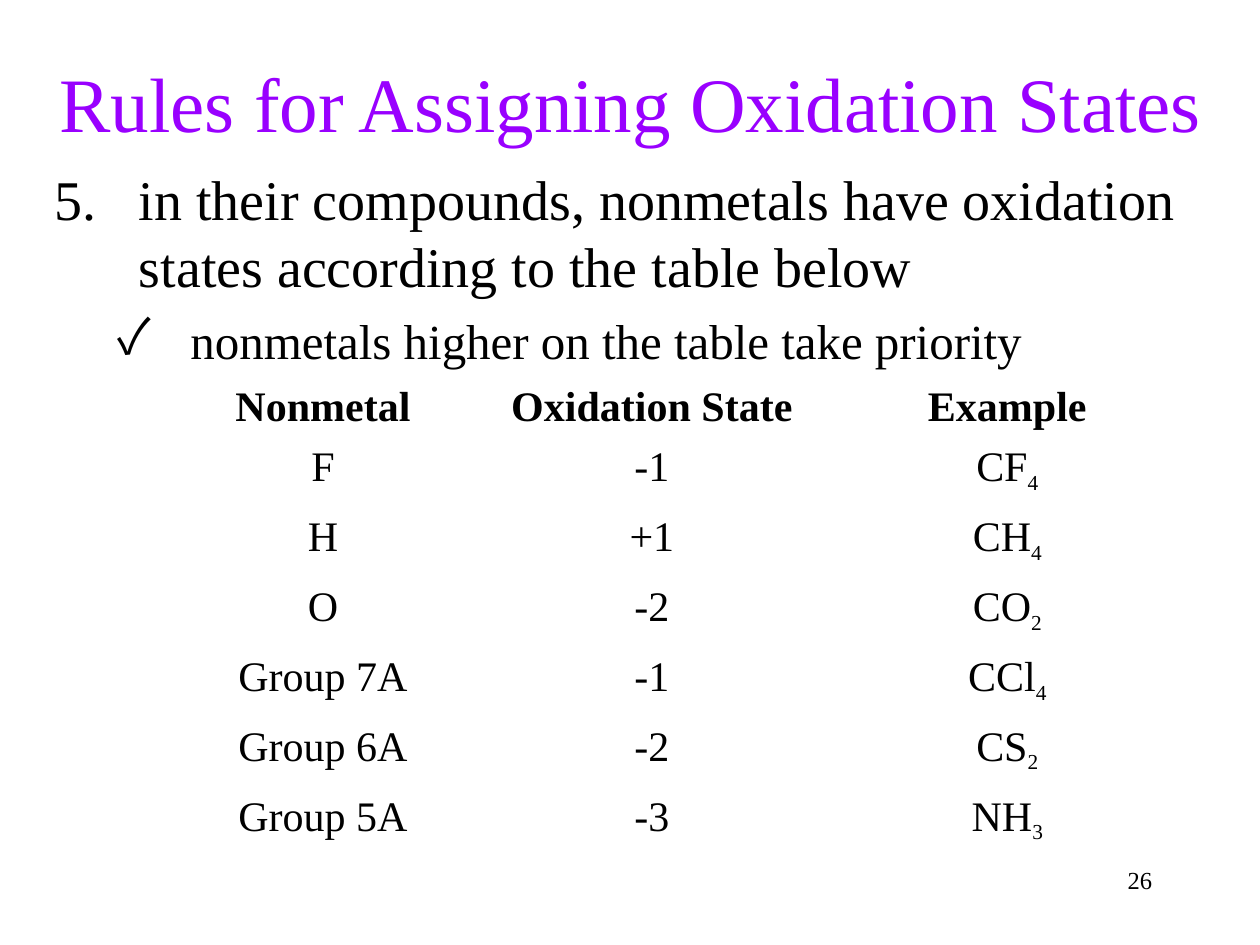
import pptx
import pptx.dml.color
import pptx.enum.text
import pptx.util

SERIF = "Times New Roman"
SYMBOL = "Noto Sans CJK KR"
BLACK = "000000"
HEADINGS = ("Nonmetal", "Oxidation State", "Example")
RULES = (
    ("F", "-1", "CF", "4"),
    ("H", "+1", "CH", "4"),
    ("O", "-2", "CO", "2"),
    ("Group 7A", "-1", "CCl", "4"),
    ("Group 6A", "-2", "CS", "2"),
    ("Group 5A", "-3", "NH", "3"),
)
COLUMN_WIDTHS = (4.9, 8.36, 5.0, 0.99)
HEADING_HEIGHT, RULE_HEIGHT, NUMBER_HEIGHT = 1.12, 1.41, 0.74


def rgb(hex_string):
    """Return the colour for a hex string."""
    return pptx.dml.color.RGBColor.from_string(hex_string)


def format_paragraph(paragraph, size, color=BLACK, font=SERIF, bold=False,
                     before=1, margin=0, indent=0):
    """Set the font, the space before and the indents of a paragraph."""
    paragraph.font.name = font
    paragraph.font.size = pptx.util.Pt(size)
    paragraph.font.bold = bold
    paragraph.font.color.rgb = rgb(color)
    paragraph.space_before = pptx.util.Pt(before)
    properties = paragraph._p.get_or_add_pPr()
    properties.set("marL", str(pptx.util.Cm(margin)))
    properties.set("indent", str(pptx.util.Cm(indent)))


def set_frame(frame):
    """Give a text frame wrapped text that starts at its top left corner."""
    frame.word_wrap = True
    frame.auto_size = pptx.enum.text.MSO_AUTO_SIZE.NONE
    frame.vertical_anchor = pptx.enum.text.MSO_ANCHOR.TOP
    frame.margin_left = frame.margin_right = frame.margin_bottom = 0
    frame.margin_top = pptx.util.Cm(0.03)


def add_title(slide, left, top, width, height):
    """Place and format the title placeholder."""
    title = slide.shapes.title
    title.left, title.top = pptx.util.Cm(left), pptx.util.Cm(top)
    title.width, title.height = pptx.util.Cm(width), pptx.util.Cm(height)
    set_frame(title.text_frame)
    title.text_frame.text = "Rules for Assigning Oxidation States"
    heading = title.text_frame.paragraphs[0]
    heading.alignment = pptx.enum.text.PP_ALIGN.LEFT
    format_paragraph(heading, 44, "9900FF", margin=0.03)


def add_text(slide, left, top, width, height, text, size, **style):
    """Add a text box with one paragraph."""
    box = slide.shapes.add_textbox(
        *(pptx.util.Cm(length) for length in (left, top, width, height)))
    set_frame(box.text_frame)
    box.text_frame.text = text
    format_paragraph(box.text_frame.paragraphs[0], size, **style)


def add_rule(slide, left, top):
    """Add the numbered rule and its checked remark below."""
    add_text(slide, left, top, 22.7, 2.77,
             "5.\tin their compounds, nonmetals have oxidation states "
             "according to the table below", 32, margin=1.73, indent=-1.7)
    add_text(slide, left + 1.27, top + 2.84, 0.9, 1.24, "✓", 28,
             font=SYMBOL, margin=0.03)
    add_text(slide, left + 2.74, top + 2.95, 16.84, 1.24,
             "nonmetals higher on the table take priority", 28, margin=0.03)


def add_oxidation_table(slide, left, top):
    """Add the oxidation state table with the page number in its corner."""
    heights = (HEADING_HEIGHT, *[RULE_HEIGHT] * len(RULES), NUMBER_HEIGHT)
    table = slide.shapes.add_table(
        len(heights), len(COLUMN_WIDTHS), pptx.util.Cm(left), pptx.util.Cm(top),
        pptx.util.Cm(sum(COLUMN_WIDTHS)), pptx.util.Cm(sum(heights))).table
    table.first_row = table.horz_banding = False
    for column, width in zip(table.columns, COLUMN_WIDTHS):
        column.width = pptx.util.Cm(width)
    for row, height in zip(table.rows, heights):
        row.height = pptx.util.Cm(height)
    for cell in table.iter_cells():
        cell.fill.background()
        cell.margin_left = cell.margin_right = 0
        cell.margin_top = cell.margin_bottom = 0
        format_paragraph(cell.text_frame.paragraphs[0], 14)

    for row, (*texts, subscript) in enumerate([(*HEADINGS, ""), *RULES]):
        for column, text in enumerate(texts):
            cell = table.cell(row, column)
            entry = cell.text_frame.paragraphs[0]
            entry.alignment = pptx.enum.text.PP_ALIGN.CENTER
            entry.add_run().text = text
            format_paragraph(entry, 24, bold=row == 0,
                             before=2.2 if row else 0,
                             margin=0.97 if column == 2 else 0)
            if row == 0:
                entry.line_spacing = pptx.util.Pt(26.2)
            else:
                cell.margin_top = pptx.util.Cm(0.08)
        if subscript:
            count = entry.add_run()
            count.text = subscript
            count.font.size = pptx.util.Pt(21)
            count._r.get_or_add_rPr().set("baseline", "-24000")

    number_cell = table.cell(len(heights) - 1, len(COLUMN_WIDTHS) - 1)
    number_cell.margin_top = pptx.util.Cm(0.13)
    page_number = number_cell.text_frame.paragraphs[0]
    page_number.add_run().text = "26"
    page_number.line_spacing = pptx.util.Pt(16.1)
    format_paragraph(page_number, 14, before=3.5, margin=0.41)


def main():
    """Build the slide and save it."""
    presentation = pptx.Presentation()
    presentation.slide_width = pptx.util.Cm(25.4)
    presentation.slide_height = pptx.util.Cm(19.05)
    slide = presentation.slides.add_slide(presentation.slide_layouts[5])
    add_title(slide, 1.17, 1.09, 23.3, 1.93)
    add_rule(slide, 1.07, 3.28)
    add_oxidation_table(slide, 4.06, 7.75)
    presentation.save("out.pptx")


if __name__ == "__main__":
    main()
